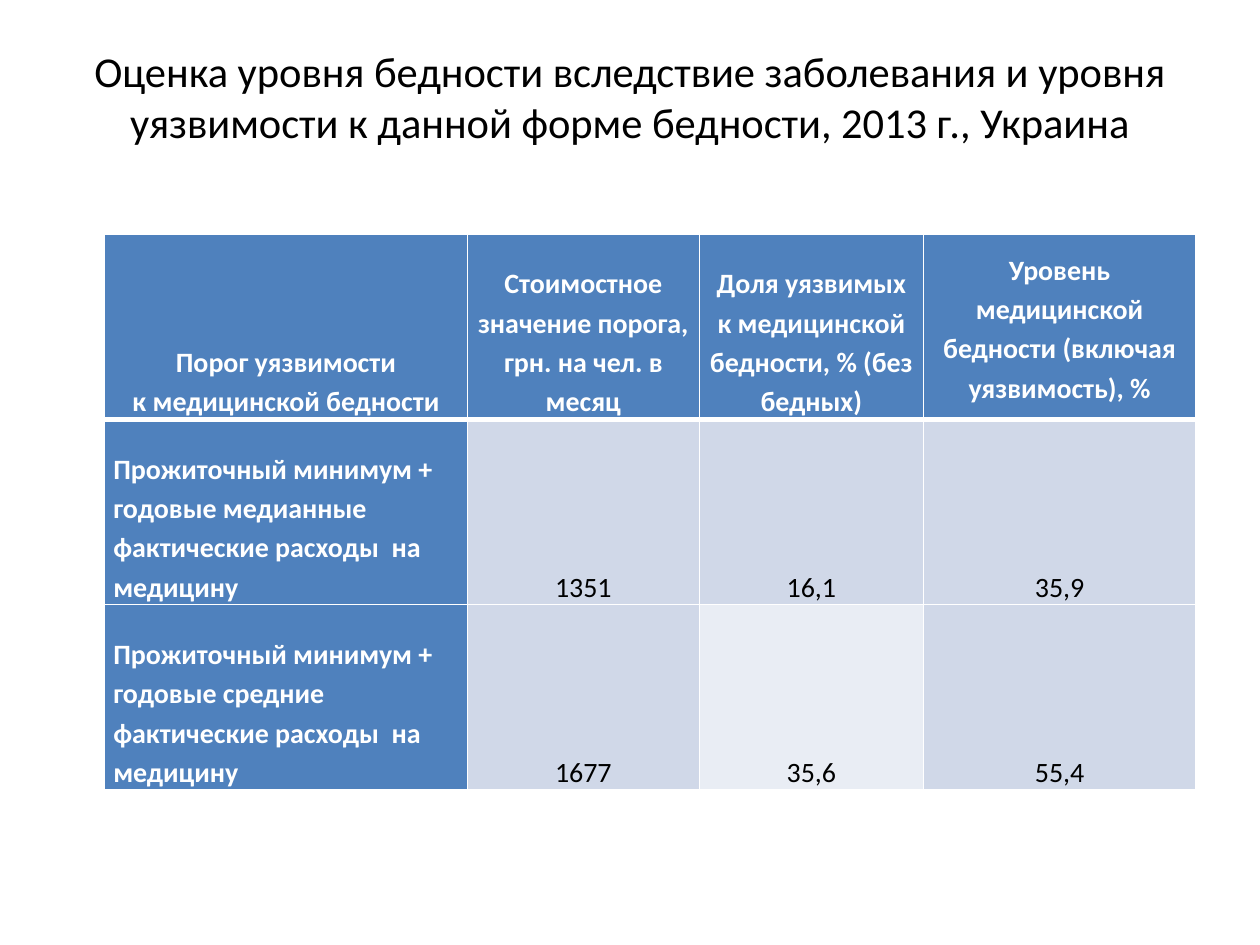
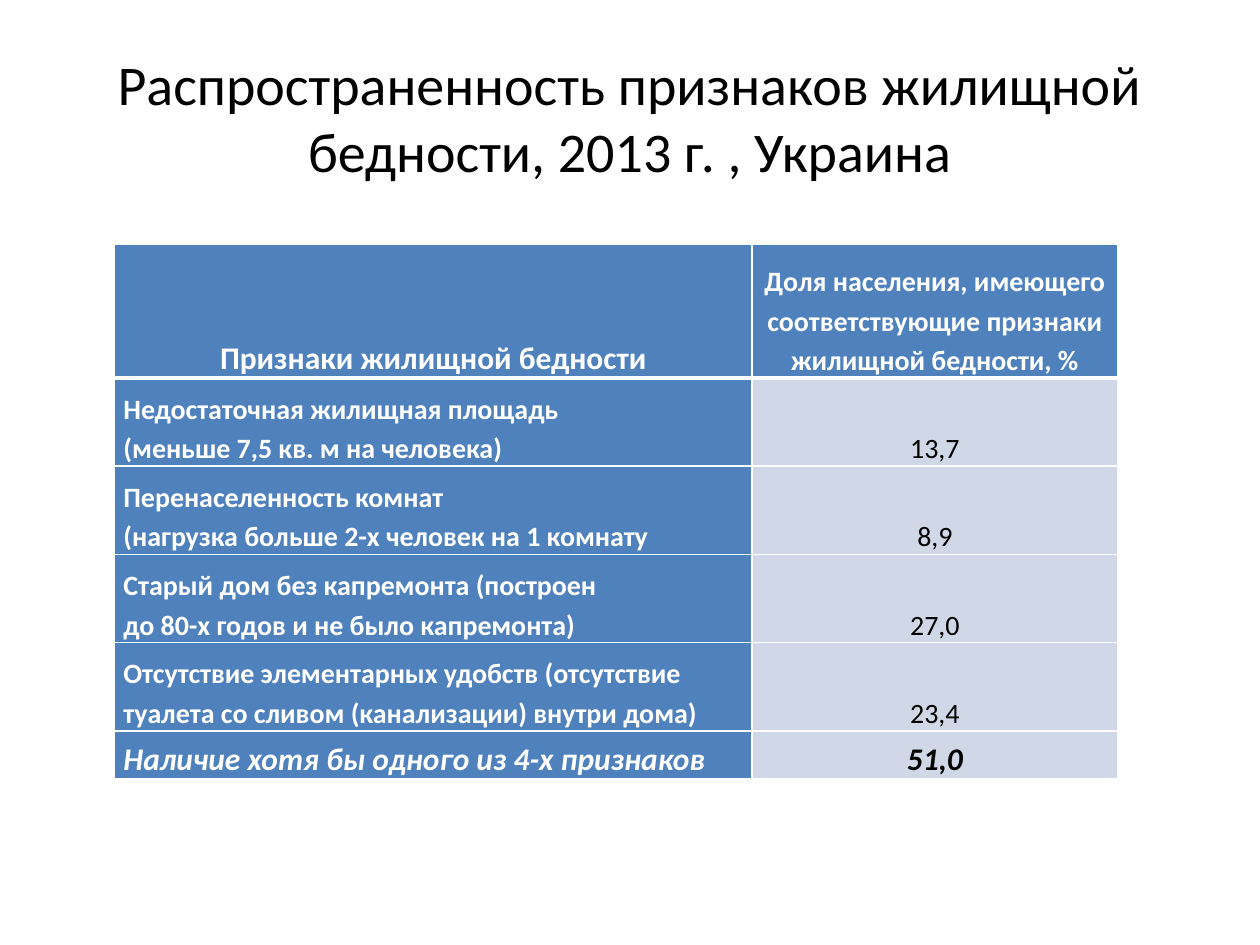
from dataclasses import dataclass

from lxml.etree import SubElement
from pptx import Presentation
from pptx.dml.color import RGBColor
from pptx.enum.text import MSO_ANCHOR, MSO_AUTO_SIZE, PP_ALIGN
from pptx.oxml.ns import qn
from pptx.presentation import Presentation as Deck
from pptx.slide import Slide
from pptx.table import _Cell
from pptx.text.text import _Paragraph
from pptx.util import Inches, Pt


@dataclass(frozen=True)
class Theme:
    font: str = "Calibri"
    ink: str = "000000"
    white: str = "FFFFFF"
    blue: str = "4F81BD"
    band: str = "D0D8E8"
    pale: str = "E9EDF4"
    text_size: float = 16
    strong_size: float = 18
    line: float = 1
    header_line: float = 3
    line_spacing: float = 1.15
    inset: float = 0.07


THEME = Theme()


@dataclass(frozen=True)
class CellSpec:
    text: str
    size: float = THEME.text_size
    bold: bool = False
    italic: bool = False
    color: str = THEME.ink
    fill: str = THEME.band
    align: PP_ALIGN = PP_ALIGN.CENTER
    anchor: MSO_ANCHOR = MSO_ANCHOR.BOTTOM


@dataclass(frozen=True)
class TableSpec:
    left: float
    top: float
    cols: list[float]
    heights: list[float]
    rows: list[list[CellSpec]]


@dataclass(frozen=True)
class SlideSpec:
    title: str
    title_size: float
    title_height: float
    table: TableSpec


def head(text: str, size: float = THEME.text_size,
         anchor: MSO_ANCHOR = MSO_ANCHOR.BOTTOM) -> CellSpec:
    return CellSpec(text, size, True, color=THEME.white, fill=THEME.blue, anchor=anchor)


def label(text: str, size: float = THEME.text_size, italic: bool = False) -> CellSpec:
    return CellSpec(text, size, True, italic, THEME.white, THEME.blue, PP_ALIGN.LEFT)


def add_text(p: _Paragraph, text: str, size: float, color: str,
             bold: bool = False, italic: bool = False) -> None:
    for i, line in enumerate(text.split("\n")):
        if i:
            p.add_line_break()
        r = p.add_run()
        r.text = line
        r.font.name = THEME.font
        r.font.size = Pt(size)
        r.font.bold = bold
        r.font.italic = italic
        r.font.color.rgb = RGBColor.from_string(color)


def set_borders(cell: _Cell, top: float, bottom: float) -> None:
    tc_pr = cell._tc.get_or_add_tcPr()
    widths = {"a:lnL": THEME.line, "a:lnR": THEME.line, "a:lnT": top, "a:lnB": bottom}
    for tag, width in widths.items():
        ln = SubElement(tc_pr, qn(tag), w=str(Pt(width)))
        fill = SubElement(ln, qn("a:solidFill"))
        SubElement(fill, qn("a:srgbClr"), val=THEME.white)


def draw_cell(cell: _Cell, spec: CellSpec, row: int) -> None:
    set_borders(cell, THEME.header_line if row == 1 else THEME.line,
                THEME.header_line if row == 0 else THEME.line)
    cell.fill.solid()
    cell.fill.fore_color.rgb = RGBColor.from_string(spec.fill)
    cell.margin_left = cell.margin_right = Inches(THEME.inset)
    cell.margin_top = cell.margin_bottom = Inches(0)
    cell.vertical_anchor = spec.anchor
    p = cell.text_frame.paragraphs[0]
    p.alignment = spec.align
    p.line_spacing = THEME.line_spacing
    add_text(p, spec.text, spec.size, spec.color, spec.bold, spec.italic)


def draw_table(s: Slide, spec: TableSpec) -> None:
    table = s.shapes.add_table(
        len(spec.heights), len(spec.cols), Inches(spec.left), Inches(spec.top),
        Inches(sum(spec.cols)), Inches(sum(spec.heights))).table
    table.horz_banding = False
    table.first_col = True
    for col, width in zip(table.columns, spec.cols):
        col.width = Inches(width)
    for row, height in zip(table.rows, spec.heights):
        row.height = Inches(height)
    for i, cells in enumerate(spec.rows):
        for j, cell in enumerate(cells):
            draw_cell(table.cell(i, j), cell, i)


def draw_slide(prs: Deck, spec: SlideSpec) -> None:
    s = prs.slides.add_slide(prs.slide_layouts[5])
    title = s.shapes.title
    title.left, title.top = Inches(0.5), Inches(0.3)
    title.width, title.height = Inches(9), Inches(spec.title_height)
    tf = title.text_frame
    tf.word_wrap = True
    tf.auto_size = MSO_AUTO_SIZE.NONE
    tf.vertical_anchor = MSO_ANCHOR.MIDDLE
    p = tf.paragraphs[0]
    p.alignment = PP_ALIGN.CENTER
    add_text(p, spec.title, spec.title_size, THEME.ink)
    draw_table(s, spec.table)


MEDICAL = TableSpec(0.83, 1.86, [2.88, 1.84, 1.78, 2.16], [1.47] * 3, [
    [head("Порог уязвимости\nк медицинской бедности"),
     head("Стоимостное значение порога, грн. на чел. в месяц"),
     head("Доля уязвимых к медицинской бедности, % (без бедных)"),
     head("Уровень медицинской бедности (включая уязвимость), %",
          anchor=MSO_ANCHOR.MIDDLE)],
    [label("Прожиточный минимум +\nгодовые медианные фактические расходы  на медицину"),
     CellSpec("1351"), CellSpec("16,1"), CellSpec("35,9")],
    [label("Прожиточный минимум +\nгодовые средние фактические расходы  на медицину"),
     CellSpec("1677"), CellSpec("35,6", fill=THEME.pale), CellSpec("55,4")],
])

HOUSING = TableSpec(0.91, 1.94, [5.06, 2.9], [1.06, *[0.7] * 4, 0.38], [
    [head("Признаки жилищной бедности", THEME.strong_size),
     head("Доля населения, имеющего соответствующие признаки жилищной бедности, %")],
    [label("Недостаточная жилищная площадь\n(меньше 7,5 кв. м на человека)"),
     CellSpec("13,7")],
    [label("Перенаселенность комнат\n(нагрузка больше 2-х человек на 1 комнату"),
     CellSpec("8,9")],
    [label("Старый дом без капремонта (построен\nдо 80-х годов и не было капремонта)"),
     CellSpec("27,0")],
    [label("Отсутствие элементарных удобств (отсутствие туалета со сливом "
           "(канализации) внутри дома)"),
     CellSpec("23,4")],
    [label("Наличие хотя бы одного из 4-х признаков", THEME.strong_size, True),
     CellSpec("51,0", THEME.strong_size, True, True)],
])

SLIDES = [
    SlideSpec("Оценка уровня бедности вследствие заболевания и уровня уязвимости "
              "к данной форме бедности, 2013 г., Украина", 24.3, 0.93, MEDICAL),
    SlideSpec("Распространенность признаков жилищной бедности, 2013 г. , Украина",
              32, 1.25, HOUSING),
]


def main() -> None:
    prs = Presentation()
    prs.slide_width, prs.slide_height = Inches(10), Inches(7.5)
    for spec in SLIDES:
        draw_slide(prs, spec)
    prs.save("out.pptx")


if __name__ == "__main__":
    main()
